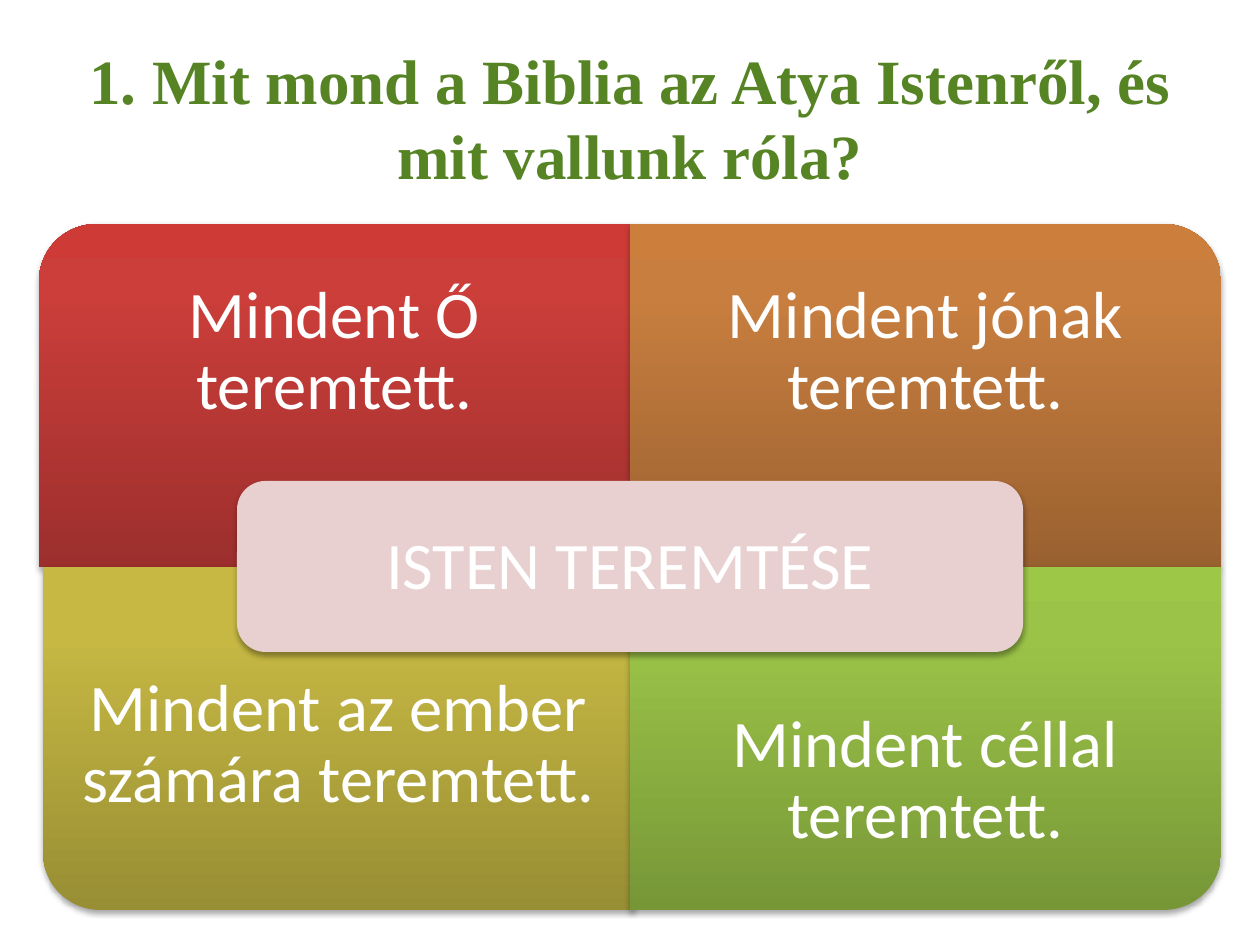
from typing import NamedTuple

from lxml.etree import SubElement
from pptx import Presentation
from pptx.dml.color import RGBColor
from pptx.enum.shapes import MSO_SHAPE as Preset
from pptx.enum.text import MSO_ANCHOR as Anchor, PP_ALIGN as Align
from pptx.oxml import parse_xml
from pptx.oxml.ns import nsdecls, qn
from pptx.util import Pt

EMU_PER_PX = 914400 / 126
WHITE, TITLE_GREEN, PINK = "FFFFFF", "568424", "E8D0D0"
PANEL_WIDTH, PANEL_HEIGHT = 591, 343
CAPTION_HEIGHT = 257
TOP_ROW, BOTTOM_ROW = 224, 567
RIGHT_COLUMN = 630


class Box(NamedTuple):
    left: int
    top: int
    width: int
    height: int


class Insets(NamedTuple):
    left: int
    top: int
    right: int
    bottom: int


class Panel(NamedTuple):
    text: str
    left: int
    top: int
    rotation: int
    gradient: tuple[str, str, str]  # bottom, near top, top
    caption_top: int
    insets: Insets = Insets(38, 38, 38, 38)


LOWER_CAPTION = BOTTOM_ROW + PANEL_HEIGHT - CAPTION_HEIGHT
PANELS = [
    Panel("Mindent Ő teremtett.", 39, TOP_ROW, 270,
          ("9C2F2D", "CB3E3A", "CE3B37"), TOP_ROW),
    Panel("Mindent jónak teremtett.", RIGHT_COLUMN, TOP_ROW, 0,
          ("9A6130", "C87E3F", "CC7E3C"), TOP_ROW),
    Panel("Mindent az ember számára teremtett.", 43, BOTTOM_ROW, 180,
          ("988E34", "C6B843", "C9BB41"), LOWER_CAPTION, Insets(38, 2, 38, 74)),
    Panel("Mindent céllal teremtett.", RIGHT_COLUMN, BOTTOM_ROW, 90,
          ("779737", "9BC348", "9DC746"), LOWER_CAPTION),
]


def px(value: float) -> int:
    return round(value * EMU_PER_PX)


def color(hex_value: str) -> RGBColor:
    return RGBColor.from_string(hex_value)


def emu(box: Box) -> list[int]:
    return [px(value) for value in box]


def add_shadow(shape) -> None:
    shape.shadow.inherit = False
    effects = shape._element.spPr.find(qn("a:effectLst"))
    shadow = SubElement(effects, qn("a:outerShdw"), blurRad="40000",
                        dist="23000", dir="5400000", rotWithShape="0")
    shadow_color = SubElement(shadow, qn("a:srgbClr"), val="000000")
    SubElement(shadow_color, qn("a:alpha"), val="35000")


def fill_gradient(shape, colors: tuple[str, str, str]) -> None:
    """Fill from bottom to top, independent of the shape's rotation."""
    stops = "".join(
        f'<a:gs pos="{position}"><a:srgbClr val="{value}"/></a:gs>'
        for position, value in zip((0, 80000, 100000), colors))
    gradient = parse_xml(
        f'<a:gradFill {nsdecls("a")} rotWithShape="0"><a:gsLst>{stops}</a:gsLst>'
        '<a:lin ang="16200000" scaled="0"/></a:gradFill>')
    shape._element.spPr.find(qn("a:prstGeom")).addnext(gradient)


def add_caption(slide, text: str, box: Box, insets: Insets) -> None:
    frame = slide.shapes.add_textbox(*emu(box)).text_frame
    frame.word_wrap = True
    frame.vertical_anchor = Anchor.MIDDLE
    frame.margin_left, frame.margin_top, frame.margin_right, frame.margin_bottom = emu(insets)
    paragraph = frame.paragraphs[0]
    paragraph.text = text
    paragraph.alignment = Align.CENTER
    paragraph.line_spacing = 0.9
    paragraph.font.name = "Calibri"
    paragraph.font.size = Pt(38)
    paragraph.font.color.rgb = color(WHITE)


def add_panel(slide, panel: Panel) -> None:
    # A quarter turn swaps the sides around the same centre
    width, height = PANEL_WIDTH, PANEL_HEIGHT
    if panel.rotation % 180:
        width, height = height, width
    box = Box(panel.left + (PANEL_WIDTH - width) // 2,
              panel.top + (PANEL_HEIGHT - height) // 2, width, height)
    shape = slide.shapes.add_shape(Preset.ROUND_1_RECTANGLE, *emu(box))
    shape.rotation = panel.rotation
    shape.line.fill.background()
    fill_gradient(shape, panel.gradient)
    add_shadow(shape)
    add_caption(slide, panel.text,
                Box(panel.left, panel.caption_top, PANEL_WIDTH, CAPTION_HEIGHT),
                panel.insets)


def add_center(slide) -> None:
    shape = slide.shapes.add_shape(Preset.ROUNDED_RECTANGLE, *emu(Box(237, 481, 786, 171)))
    shape.fill.solid()
    shape.fill.fore_color.rgb = color(PINK)
    shape.line.fill.background()
    add_shadow(shape)
    add_caption(slide, "ISTEN TEREMTÉSE", Box(245, 490, 770, 155), Insets(20, 20, 20, 20))


def set_title(slide) -> None:
    title = slide.shapes.title
    title.left, title.top, title.width, title.height = emu(Box(63, 38, 1134, 158))
    title.text_frame.vertical_anchor = Anchor.MIDDLE
    paragraph = title.text_frame.paragraphs[0]
    paragraph.text = "1. Mit mond a Biblia az Atya Istenről, és mit vallunk róla?"
    paragraph.alignment = Align.CENTER
    paragraph.font.name = "Times New Roman"
    paragraph.font.size = Pt(36)
    paragraph.font.bold = True
    paragraph.font.color.rgb = color(TITLE_GREEN)


def main() -> None:
    presentation = Presentation()
    presentation.slide_width, presentation.slide_height = px(1260), px(945)
    slide = presentation.slides.add_slide(presentation.slide_layouts[5])
    set_title(slide)
    # Four quarters of the matrix, then the label over their meeting point
    for panel in PANELS:
        add_panel(slide, panel)
    add_center(slide)
    presentation.save("out.pptx")


if __name__ == "__main__":
    main()
